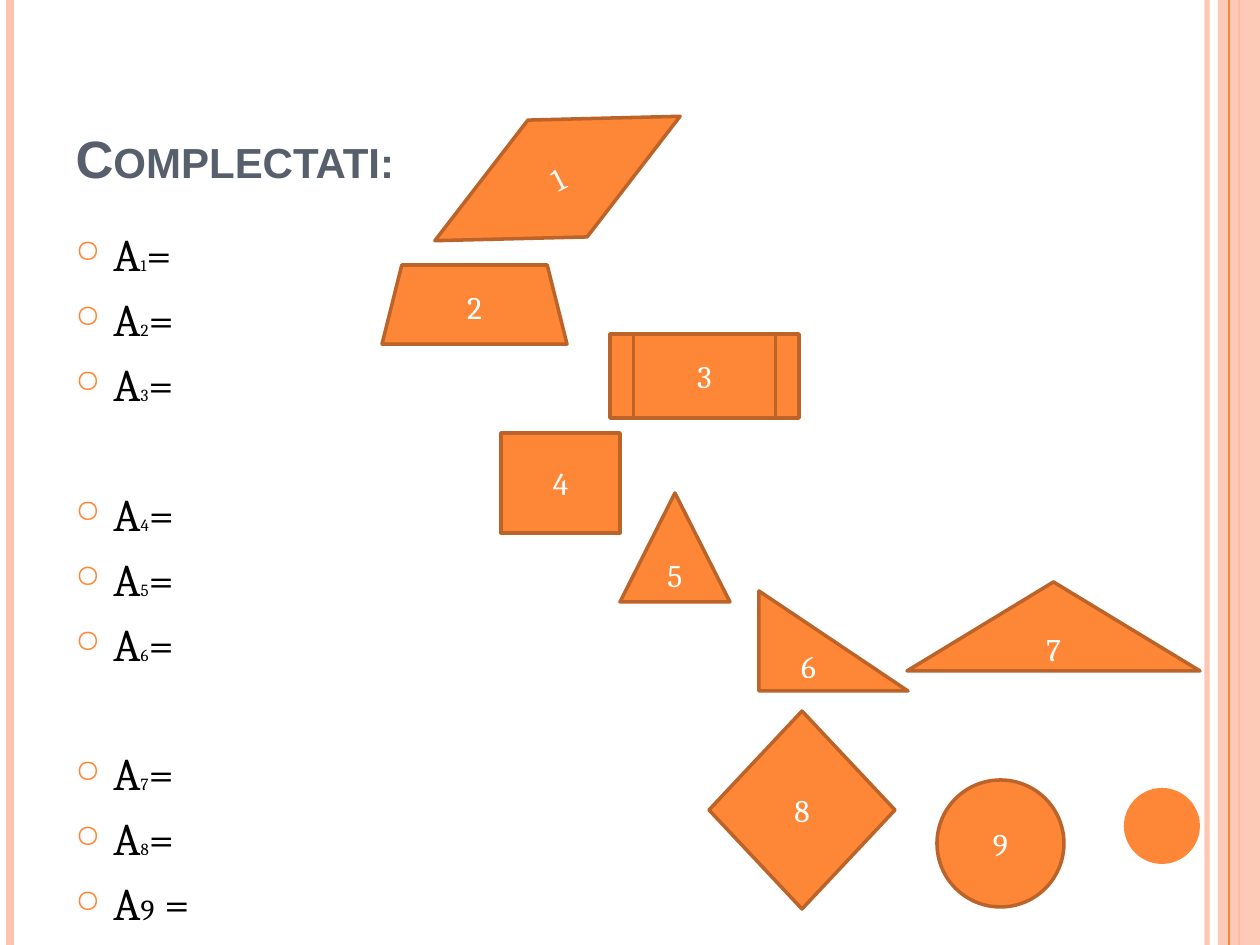
from dataclasses import dataclass

from lxml import etree
from pptx import Presentation
from pptx import util as u
from pptx.dml.color import RGBColor
from pptx.enum import shapes, text
from pptx.oxml.ns import qn

PX = 914400 / 126
WIDTH, HEIGHT = 1260, 945
KIND = shapes.MSO_SHAPE


@dataclass(frozen=True)
class Theme:
    orange: str = "FE8637"
    outline: str = "BC6329"
    peach: str = "FEC3AE"
    heading: str = "575F6D"
    ink: str = "000000"
    white: str = "FFFFFF"
    heading_font: str = "Arial"
    body_font: str = "Cambria"
    heading_size: float = 30
    body_size: float = 25.9
    label_size: float = 18


THEME = Theme()

# Vertical rules: x, colour, width in points, opacity in percent
RULES = [
    (1207, THEME.peach, 3, 93),
    (10, THEME.peach, 4.5, 100),
    (1239, THEME.orange, 1.5, 100),
]
INNER_RULE = (1229, THEME.orange, 0.75, 100)

# Numbered figures: label, kind, box, rotation
FIGURES = [
    ("1", KIND.FLOWCHART_DECISION, (420, 113, 275, 131), 333.1),
    ("2", KIND.TRAPEZOID, (382, 265, 185, 79), 0),
    ("3", KIND.FLOWCHART_PREDEFINED_PROCESS, (610, 334, 189, 84), 0),
    ("4", KIND.RECTANGLE, (501, 433, 119, 100), 0),
    ("5", KIND.ISOSCELES_TRIANGLE, (620, 493, 110, 109), 0),
    ("6", KIND.RIGHT_TRIANGLE, (759, 591, 149, 100), 0),
    ("8", KIND.DIAMOND, (709, 711, 186, 198), 0),
    ("9", KIND.OVAL, (937, 780, 127, 127), 0),
    ("7", KIND.ISOSCELES_TRIANGLE, (907, 582, 293, 89), 0),
]

# Area formulas: index sizes that differ, and indexes that open a new group
INDEX_SIZE = 9.7
SPECIAL_SIZES = {1: 9.2, 9: 16.6}
GROUP_STARTS = (4, 7)
LINE_PITCH, PARAGRAPH_GAP = 31.1, 6


def px(*lengths):
    return [u.Emu(round(length * PX)) for length in lengths]


def color(value):
    return RGBColor.from_string(value)


def set_opacity(fill, percent):
    solid = fill._xPr.find(qn("a:solidFill"))
    etree.SubElement(solid[0], qn("a:alpha"), val=str(percent * 1000))


def add_run(paragraph, words, font, size, ink, bold=False):
    run = paragraph.add_run()
    run.text = words
    run.font.name = font
    run.font.size = u.Pt(size)
    run.font.bold = bold
    run.font.color.rgb = color(ink)
    return run


def add_rule(slide, x, ink, width, opacity):
    rule = slide.shapes.add_connector(
        shapes.MSO_CONNECTOR.STRAIGHT, *px(x, 0, x, HEIGHT))
    rule.line.color.rgb = color(ink)
    rule.line.width = u.Pt(width)
    if opacity < 100:
        set_opacity(rule.line.fill, opacity)
    etree.SubElement(rule._element.spPr, qn("a:effectLst"))


def add_filled(slide, kind, box, fill):
    shape = slide.shapes.add_shape(kind, *px(*box))
    shape.shadow.inherit = False
    shape.fill.solid()
    shape.fill.fore_color.rgb = color(fill)
    shape.line.fill.background()
    return shape


def add_figure(slide, label, kind, box, rotation):
    shape = add_filled(slide, kind, box, THEME.orange)
    shape.rotation = rotation
    shape.line.color.rgb = color(THEME.outline)
    shape.line.width = u.Pt(2)
    frame = shape.text_frame
    frame.vertical_anchor = text.MSO_ANCHOR.MIDDLE
    paragraph = frame.paragraphs[0]
    paragraph.alignment = text.PP_ALIGN.CENTER
    add_run(paragraph, label, THEME.body_font, THEME.label_size, THEME.white)


def format_title(slide, words):
    title = slide.shapes.title
    title.left, title.top, title.width, title.height = px(63, 38, 1029, 157)
    frame = title.text_frame
    frame.vertical_anchor = text.MSO_ANCHOR.BOTTOM
    paragraph = frame.paragraphs[0]
    paragraph.alignment = text.PP_ALIGN.LEFT
    run = add_run(paragraph, words, THEME.heading_font, THEME.heading_size,
                  THEME.heading, bold=True)
    run.font._element.set("cap", "small")


def set_bullet(paragraph):
    properties = paragraph._p.get_or_add_pPr()
    indent = px(38)[0]
    properties.set("marL", str(indent))
    properties.set("indent", str(-indent))
    bullet_color = etree.SubElement(properties, qn("a:buClr"))
    etree.SubElement(bullet_color, qn("a:srgbClr"), val=THEME.orange)
    etree.SubElement(properties, qn("a:buSzPct"), val="70000")
    etree.SubElement(properties, qn("a:buChar"), char="○")


def add_formulas(slide):
    frame = slide.shapes.add_textbox(*px(63, 220, 1029, 672)).text_frame
    frame.word_wrap = True
    for index in range(1, 10):
        paragraph = frame.paragraphs[0] if index == 1 else frame.add_paragraph()
        gap = PARAGRAPH_GAP
        if index in GROUP_STARTS:
            gap += LINE_PITCH + PARAGRAPH_GAP
        paragraph.space_before = u.Pt(gap)
        paragraph.line_spacing = u.Pt(LINE_PITCH)
        set_bullet(paragraph)
        parts = [
            ("A", THEME.body_size),
            (str(index), SPECIAL_SIZES.get(index, INDEX_SIZE)),
            (" =" if index == 9 else "=", THEME.body_size),
        ]
        for words, size in parts:
            add_run(paragraph, words, THEME.body_font, size, THEME.ink)


def main():
    presentation = Presentation()
    presentation.slide_width, presentation.slide_height = px(WIDTH, HEIGHT)
    slide = presentation.slides.add_slide(presentation.slide_layouts[5])

    # Side decoration
    for rule in RULES:
        add_rule(slide, *rule)
    band = add_filled(slide, KIND.RECTANGLE, (1218, 0, 42, HEIGHT), THEME.peach)
    set_opacity(band.fill, 87)
    add_rule(slide, *INNER_RULE)
    add_filled(slide, KIND.OVAL, (1124, 788, 76, 76), THEME.orange)

    # Title and formulas
    format_title(slide, "Complectati:")
    add_formulas(slide)

    # Numbered figures
    for figure in FIGURES:
        add_figure(slide, *figure)

    presentation.save("out.pptx")


if __name__ == "__main__":
    main()
